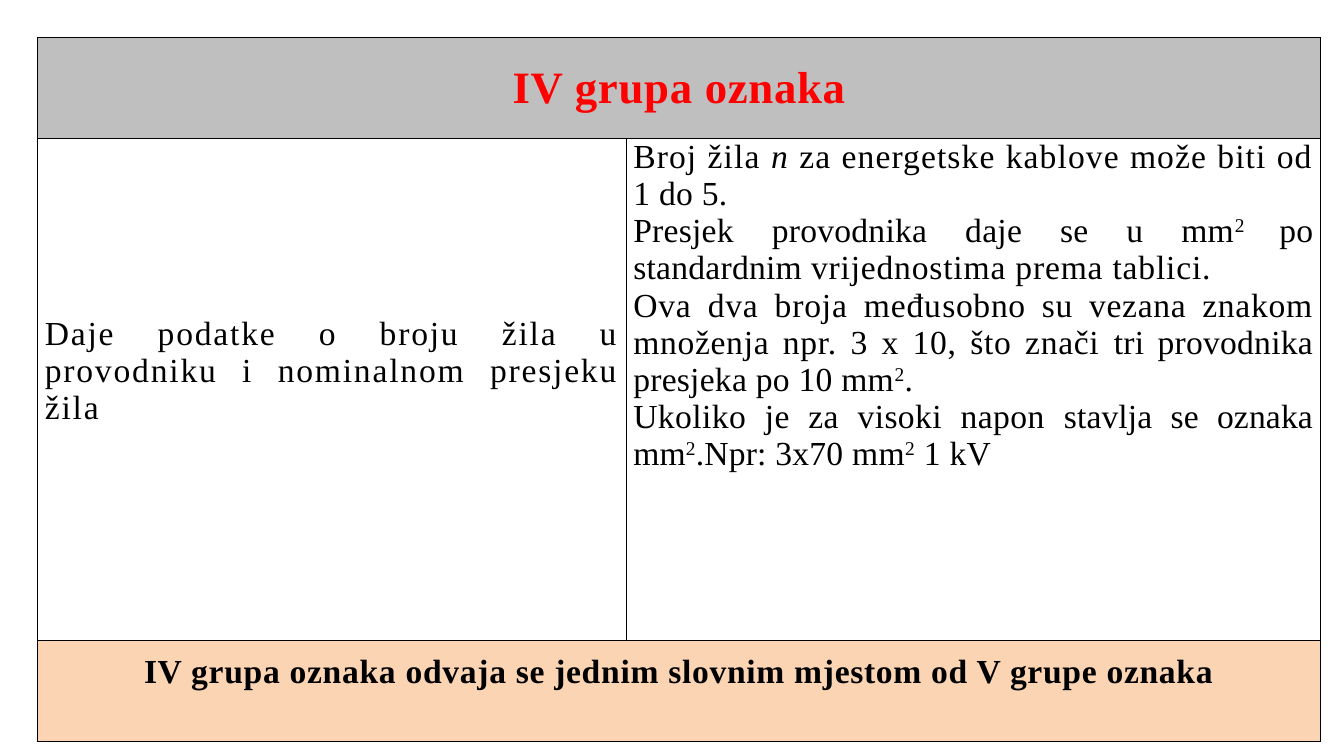
"""Builds the slide with the table on the fourth group of cable marks."""
from lxml.etree import SubElement
from pptx import Presentation
from pptx.dml.color import RGBColor
from pptx.enum.text import MSO_ANCHOR as Anchor, PP_ALIGN as Align
from pptx.oxml.ns import qn
from pptx.util import Cm, Pt

FONT = "Times New Roman"
BLACK, RED, GREY, PEACH = "000000", "FF0000", "BFBFBF", "FBD4B4"
LINE_HEIGHT = 0.94

HEADING = [[("IV grupa oznaka", {"spacing": 0.5})]]
MEANING = [[("Daje podatke o broju žila u provodniku i nominalnom presjeku žila",
             {"spacing": 1.3})]]
SQUARE = ("2", {"spacing": 0.2, "raised": True})
DETAILS = [
    [("Broj žila ", {"spacing": 0.8}),
     ("n ", {"spacing": 0.8, "italic": True}),
     ("za energetske kablove može biti od ", {"spacing": 0.8}),
     ("1 do 5.", {"spacing": 0.2})],
    [("Presjek provodnika daje se u mm", {"spacing": 0.2}),
     ("2 ", {"spacing": 0.2, "raised": True}),
     ("po standardnim ", {"spacing": 0.2}),
     ("vrijednostima prema tablici.", {"spacing": 0.6})],
    [("Ova dva broja među", {"spacing": 0.6}),
     ("sobno su vezana znakom množenja npr. 3 x 10, što znači ", {"spacing": 0.5}),
     ("tri provodnika presjeka po 10 mm", {"spacing": 0.2}),
     SQUARE,
     (".", {"spacing": 0.2})],
    [("Ukoliko je za visoki napon ", {"spacing": 0.3}),
     ("stavlja se oznaka mm", {"spacing": 0.1}),
     SQUARE,
     (".Npr:", {"spacing": 0.1}),
     (" 3x70 mm", {"spacing": 0.2}),
     SQUARE,
     (" 1 kV", {"spacing": 0.2})],
]
SEPARATION = [[("IV grupa oznaka odvaja se jednim slovnim mjestom od V grupe oznaka",
                {"spacing": 0.5})]]

COLUMN_WIDTHS = [14.83, 17.5]
ROW_HEIGHTS = [2.54, 12.65, 2.54]
LEFT = TOP = 0.95


def rgb(value):
    """Turn a hex string into a colour."""
    return RGBColor.from_string(value)


def add_text(paragraph, text, spacing=0, size=24, color=BLACK,
             bold=False, italic=False, raised=False):
    """Add one formatted run to a paragraph."""
    run = paragraph.add_run()
    run.text = text
    font = run.font
    font.name, font.size, font.bold, font.italic = FONT, Pt(size), bold, italic
    font.color.rgb = rgb(color)
    properties = run._r.get_or_add_rPr()
    properties.set("spc", str(round(spacing * 100)))
    if raised:
        properties.set("baseline", "30000")


def add_borders(cell):
    """Draw a thin black line on every side of a cell."""
    properties = cell._tc.get_or_add_tcPr()
    for side in ("a:lnL", "a:lnR", "a:lnT", "a:lnB"):
        line = SubElement(properties, qn(side), w=str(Pt(1)))
        fill = SubElement(line, qn("a:solidFill"))
        SubElement(fill, qn("a:srgbClr"), val=BLACK)


def fill_cell(cell, paragraphs, align=Align.JUSTIFY, anchor=Anchor.MIDDLE,
              background=None, bottom=0, **text_format):
    """Write the paragraphs into a cell and set its look."""
    cell.vertical_anchor = anchor
    cell.margin_left = cell.margin_right = Cm(0.18)
    cell.margin_top, cell.margin_bottom = 0, Cm(bottom)
    if background:
        cell.fill.solid()
        cell.fill.fore_color.rgb = rgb(background)
    else:
        cell.fill.background()
    frame = cell.text_frame
    for index, runs in enumerate(paragraphs):
        paragraph = frame.add_paragraph() if index else frame.paragraphs[0]
        paragraph.alignment = align
        for text, run_format in runs:
            add_text(paragraph, text, **text_format, **run_format)


def main():
    """Build and save the slide."""
    deck = Presentation()
    deck.slide_width, deck.slide_height = Cm(33.87), Cm(19.05)
    slide = deck.slides.add_slide(deck.slide_layouts[6])
    table = slide.shapes.add_table(
        len(ROW_HEIGHTS), len(COLUMN_WIDTHS), Cm(LEFT), Cm(TOP),
        Cm(sum(COLUMN_WIDTHS)), Cm(sum(ROW_HEIGHTS))).table
    table.first_row = table.horz_banding = False
    for column, width in zip(table.columns, COLUMN_WIDTHS):
        column.width = Cm(width)
    for row, height in zip(table.rows, ROW_HEIGHTS):
        row.height = Cm(height)
    for cell in table.iter_cells():
        add_borders(cell)
    for row in (0, 2):
        table.cell(row, 0).merge(table.cell(row, 1))

    fill_cell(table.cell(0, 0), HEADING, align=Align.CENTER,
              background=GREY, size=32, color=RED, bold=True)
    fill_cell(table.cell(1, 0), MEANING, bottom=LINE_HEIGHT)
    fill_cell(table.cell(1, 1), DETAILS, anchor=Anchor.TOP)
    fill_cell(table.cell(2, 0), SEPARATION, align=Align.CENTER,
              background=PEACH, bottom=LINE_HEIGHT, bold=True)
    deck.save("out.pptx")


if __name__ == "__main__":
    main()
